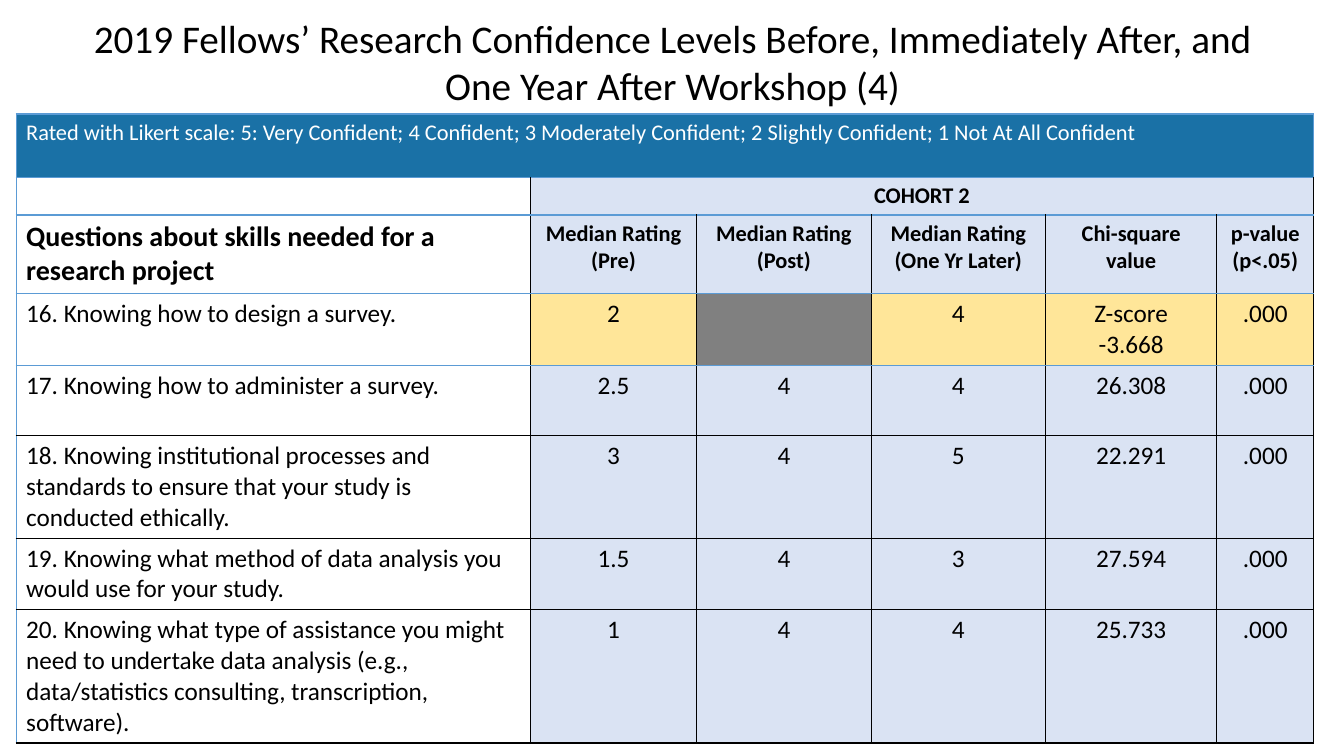
from lxml import etree
from pptx import Presentation
from pptx.dml.color import RGBColor
from pptx.enum.text import MSO_ANCHOR, MSO_AUTO_SIZE, PP_ALIGN
from pptx.oxml.ns import qn
from pptx.util import Inches, Pt

LEFT, CENTER = PP_ALIGN.LEFT, PP_ALIGN.CENTER
MIDDLE, NO_AUTOSIZE = MSO_ANCHOR.MIDDLE, MSO_AUTO_SIZE.NONE
TITLE_ONLY = 5

COLORS = {
    "text": "000000", "white": "FFFFFF", "banner": "1A71A6",
    "cohort": "DAE3F3", "highlight": "FFE699", "missing": "808080",
    "rule": "000000", "accent_rule": "5B9BD5",
}

# Shares of the slide, in percent
TITLE_BOX = (2.4, 1.2, 95.27, 13.87)
TABLE_ORIGIN = (1.2, 15.07)
COLUMN_WIDTHS = (38.26, 12.38, 12.98, 12.98, 12.75, 7.2)
ROW_HEIGHTS = (8.4, 4.8, 10.27, 9.33, 9.33, 13.33, 9.33, 17.6)

TITLE_LINES = (
    "2019 Fellows’ Research Confidence Levels Before, Immediately After, and",
    "One Year After Workshop (4)",
)
SCALE_NOTE = ("Rated with Likert scale: 5: Very Confident; 4 Confident; "
              "3 Moderately Confident; 2 Slightly Confident; 1 Not At All Confident")
HEADINGS = (
    "Questions about skills needed for a research project",
    "Median Rating\n(Pre)", "Median Rating\n(Post)",
    "Median Rating\n(One Yr Later)", "Chi-square value", "p-value (p<.05)",
)
RATINGS = (
    ("16. Knowing how to design a survey.", "2", "", "4", "Z-score\n-3.668", ".000"),
    ("17. Knowing how to administer a survey.", "2.5", "4", "4", "26.308", ".000"),
    ("18. Knowing institutional processes and standards to ensure that your study "
     "is conducted ethically.", "3", "4", "5", "22.291", ".000"),
    ("19. Knowing what method of data analysis you would use for your study.",
     "1.5", "4", "3", "27.594", ".000"),
    ("20. Knowing what type of assistance you might need to undertake data analysis "
     "(e.g., data/statistics consulting, transcription, software).",
     "1", "4", "4", "25.733", ".000"),
)
GRID = ((SCALE_NOTE,) + ("",) * 5, ("", "COHORT 2") + ("",) * 4, HEADINGS) + RATINGS
BANNER_ROW, COHORT_ROW, HEADING_ROW, HIGHLIGHT_ROW = range(4)


class ConfidenceSlide:
    font = "Calibri"

    def __init__(self, deck):
        self.width, self.height = deck.slide_width, deck.slide_height
        self.slide = deck.slides.add_slide(deck.slide_layouts[TITLE_ONLY])

    def across(self, percent):
        return round(self.width * percent / 100)

    def down(self, percent):
        return round(self.height * percent / 100)

    def add_run(self, paragraph, text, size, color="text", bold=False):
        run = paragraph.add_run()
        run.text = text
        run.font.name, run.font.size, run.font.bold = self.font, Pt(size), bold
        run.font.color.rgb = RGBColor.from_string(COLORS[color])

    def add_title(self, lines, box):
        title = self.slide.shapes.title
        left, top, width, height = box
        title.left, title.top = self.across(left), self.down(top)
        title.width, title.height = self.across(width), self.down(height)
        frame = title.text_frame
        frame.word_wrap, frame.auto_size = True, NO_AUTOSIZE
        frame.vertical_anchor = MIDDLE
        paragraph = frame.paragraphs[0]
        paragraph.alignment = CENTER
        for index, line in enumerate(lines):
            if index:
                paragraph.add_line_break()
            self.add_run(paragraph, line, 28)

    def add_table(self, grid, origin, widths, heights):
        frame = self.slide.shapes.add_table(
            len(heights), len(widths), self.across(origin[0]), self.down(origin[1]),
            self.across(sum(widths)), self.down(sum(heights)))
        table = frame.table
        table.first_row = table.horz_banding = False
        for column, width in zip(table.columns, widths):
            column.width = self.across(width)
        for row, height in zip(table.rows, heights):
            row.height = self.down(height)
        last = len(widths) - 1
        table.cell(BANNER_ROW, 0).merge(table.cell(BANNER_ROW, last))
        table.cell(COHORT_ROW, 1).merge(table.cell(COHORT_ROW, last))
        for row, texts in enumerate(grid):
            for column, text in enumerate(texts):
                cell = table.cell(row, column)
                self.fill_cell(cell, row, column, text)
                self.write_cell(cell, row, column, text)
                self.rule_cell(cell, row, column)

    def fill_cell(self, cell, row, column, text):
        if row == BANNER_ROW:
            color = "banner"
        elif column == 0:
            color = "white"
        elif row == HIGHLIGHT_ROW:
            color = "highlight" if text else "missing"
        else:
            color = "cohort"
        cell.fill.solid()
        cell.fill.fore_color.rgb = RGBColor.from_string(COLORS[color])

    def write_cell(self, cell, row, column, text):
        if row == HEADING_ROW and column == 0:
            size = 20
        else:
            size = 16 if row <= HEADING_ROW else 18
        if not text:
            end = etree.SubElement(cell.text_frame.paragraphs[0]._p, qn("a:endParaRPr"))
            end.set("sz", str(size * 100))
            return
        for index, line in enumerate(text.split("\n")):
            frame = cell.text_frame
            paragraph = frame.add_paragraph() if index else frame.paragraphs[0]
            paragraph.alignment = CENTER if column else LEFT
            self.add_run(paragraph, line, size,
                         color="white" if row == BANNER_ROW else "text",
                         bold=row in (COHORT_ROW, HEADING_ROW))

    def rule_cell(self, cell, row, column):
        """Accent rules frame the banner, the first column and the upper rows."""
        banner = row == BANNER_ROW
        accented = {"L": banner or column == 0, "R": banner,
                    "T": row <= HIGHLIGHT_ROW + 1, "B": row <= HIGHLIGHT_ROW}
        properties = cell._tc.get_or_add_tcPr()
        for index, (side, accent) in enumerate(accented.items()):
            line = etree.Element(qn("a:ln" + side), w=str(Pt(1)))
            fill = etree.SubElement(line, qn("a:solidFill"))
            etree.SubElement(fill, qn("a:srgbClr"),
                             val=COLORS["accent_rule" if accent else "rule"])
            properties.insert(index, line)


def main():
    deck = Presentation()
    deck.slide_width, deck.slide_height = Inches(13.33), Inches(7.5)
    page = ConfidenceSlide(deck)
    page.add_title(TITLE_LINES, TITLE_BOX)
    page.add_table(GRID, TABLE_ORIGIN, COLUMN_WIDTHS, ROW_HEIGHTS)
    deck.save("out.pptx")


if __name__ == "__main__":
    main()
